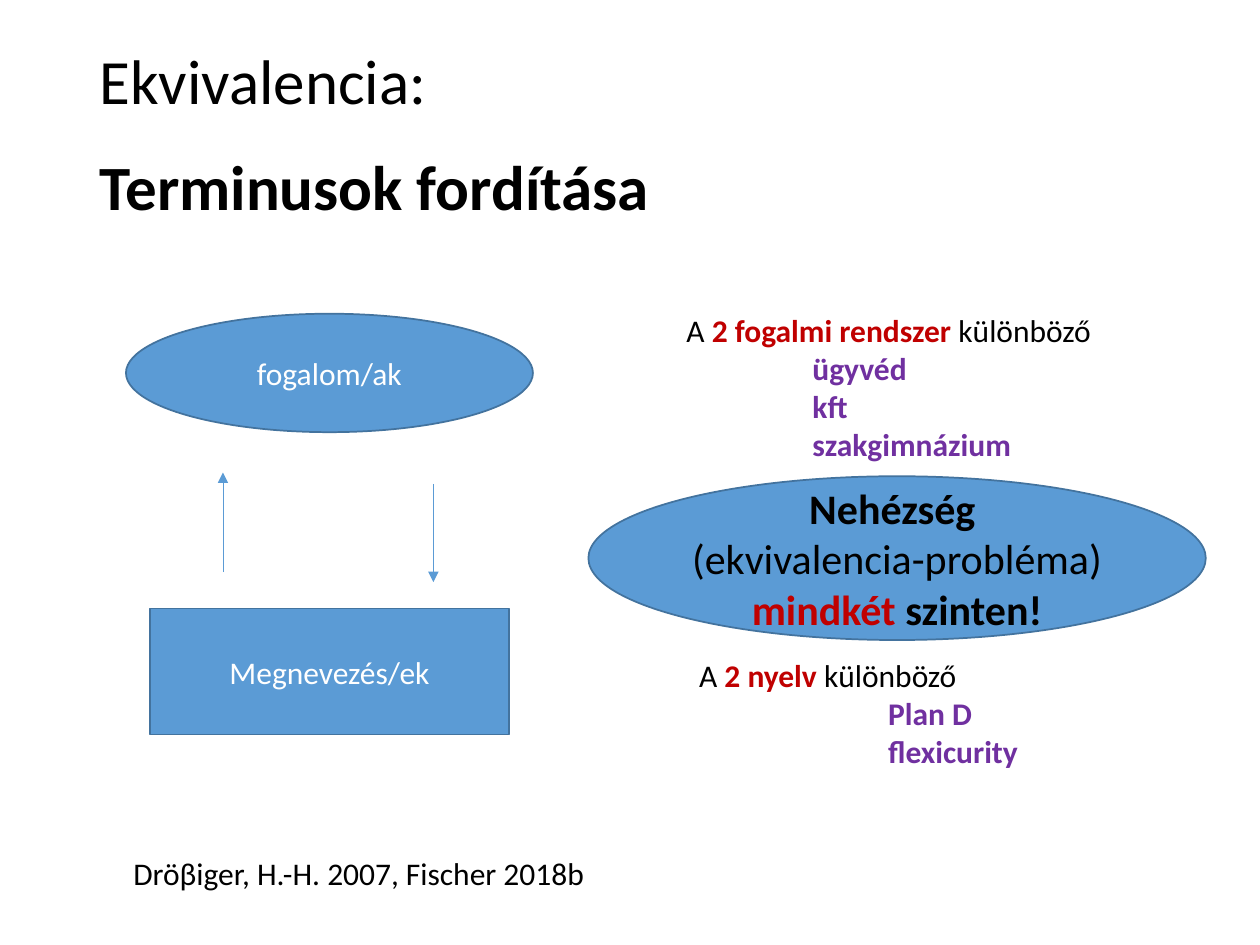
from pptx import Presentation
from pptx import util as u
from pptx.dml.color import RGBColor
from pptx.enum import shapes, text
from pptx.oxml.ns import qn
from lxml import etree

BLACK = RGBColor(0x00, 0x00, 0x00)
WHITE = RGBColor(0xFF, 0xFF, 0xFF)
RED = RGBColor(0xC0, 0x00, 0x00)
PURPLE = RGBColor(0x70, 0x30, 0xA0)
BLUE = RGBColor(0x5B, 0x9B, 0xD5)
EDGE = RGBColor(0x43, 0x73, 0x9E)

FONT = "Calibri"
WIDTH, HEIGHT = 10, 7.5

PLAIN = (BLACK, False)
BOLD = (BLACK, True)
KEY = (RED, True)
EXAMPLE = (PURPLE, True)
LABEL = (WHITE, False)

TITLE = [[("Ekvivalencia:", PLAIN)], [("Terminusok fordítása", BOLD)]]
SOURCE = [[("Dröβiger, H.-H. 2007, Fischer 2018b", PLAIN)]]

NOTES = [
    ((4.35, 2.42, 5.53, 1.62), "2 fogalmi rendszer ",
     ["ügyvéd", "kft", "szakgimnázium"], 2),
    ((4.45, 5.16, 5.28, 1.31), "2 nyelv ",
     ["Plan D", "flexicurity"], 2.5),
]
NODES = [
    (shapes.MSO_SHAPE.OVAL, (4.67, 3.78, 4.9, 1.3), 24,
     [[("Nehézség ", BOLD)],
      [("(ekvivalencia-probléma) ", PLAIN), ("mindkét ", KEY), ("szinten!", BOLD)]]),
    (shapes.MSO_SHAPE.OVAL, (1, 2.49, 3.23, 0.94), 18, [[("fogalom/ak", LABEL)]]),
    (shapes.MSO_SHAPE.RECTANGLE, (1.19, 4.83, 2.85, 1), 18, [[("Megnevezés/ek", LABEL)]]),
]
ARROWS = [(1.77, 4.54, 3.75), (3.44, 3.84, 4.62)]


def inches(values):
    return [u.Inches(value) for value in values]


def write(frame, lines, size=18, align=text.PP_ALIGN.LEFT, anchor=text.MSO_ANCHOR.TOP,
          wrap=True, indents=None, spacing=None, gap=0):
    frame.word_wrap = wrap
    frame.auto_size = text.MSO_AUTO_SIZE.NONE
    frame.vertical_anchor = anchor
    for index, line in enumerate(lines):
        para = frame.add_paragraph() if index else frame.paragraphs[0]
        para.alignment = align
        para.space_before = u.Pt(gap if index else 0)
        if spacing:
            para.line_spacing = spacing
        if indents:
            properties = para._p.get_or_add_pPr()
            properties.set("marL", str(u.Inches(indents[index])))
            properties.set("indent", "0")
        for words, (color, bold) in line:
            span = para.add_run()
            span.text = words
            span.font.name = FONT
            span.font.size = u.Pt(size)
            span.font.bold = bold
            span.font.color.rgb = color


def add_arrow(page, x, start, end):
    arrow = page.shapes.add_connector(
        shapes.MSO_CONNECTOR.STRAIGHT, *inches((x, start, x, end)))
    arrow.line.color.rgb = BLUE
    arrow.line.width = u.Pt(0.5)
    etree.SubElement(arrow.line._get_or_add_ln(), qn("a:tailEnd"), type="triangle")
    etree.SubElement(arrow._element.spPr, qn("a:effectLst"))


def add_node(page, kind, place, size, lines):
    node = page.shapes.add_shape(kind, *inches(place))
    node.shadow.inherit = False
    node.fill.solid()
    node.fill.fore_color.rgb = BLUE
    node.line.color.rgb = EDGE
    node.line.width = u.Pt(1)
    write(node.text_frame, lines, size=size, align=text.PP_ALIGN.CENTER,
          anchor=text.MSO_ANCHOR.MIDDLE)


def add_note(page, place, key, examples, indent):
    box = page.shapes.add_textbox(*inches(place))
    lines = [[("A ", PLAIN), (key, KEY), ("különböző", PLAIN)]]
    lines += [[(example, EXAMPLE)] for example in examples]
    write(box.text_frame, lines, indents=[1] + [indent] * len(examples))


def main():
    deck = Presentation()
    deck.slide_width, deck.slide_height = inches((WIDTH, HEIGHT))
    page = deck.slides.add_slide(deck.slide_layouts[5])

    title = page.shapes.title
    title.left, title.top, title.width, title.height = inches((0.69, 0.4, 8.62, 1.45))
    write(title.text_frame, TITLE, size=36, anchor=text.MSO_ANCHOR.MIDDLE,
          spacing=0.7, gap=30)

    for arrow in ARROWS:
        add_arrow(page, *arrow)
    for note in NOTES:
        add_note(page, *note)
    for node in NODES:
        add_node(page, *node)

    source = page.shapes.add_textbox(*inches((0.96, 6.73, 3.89, 0.4)))
    write(source.text_frame, SOURCE, wrap=False)

    deck.save("out.pptx")


if __name__ == "__main__":
    main()
